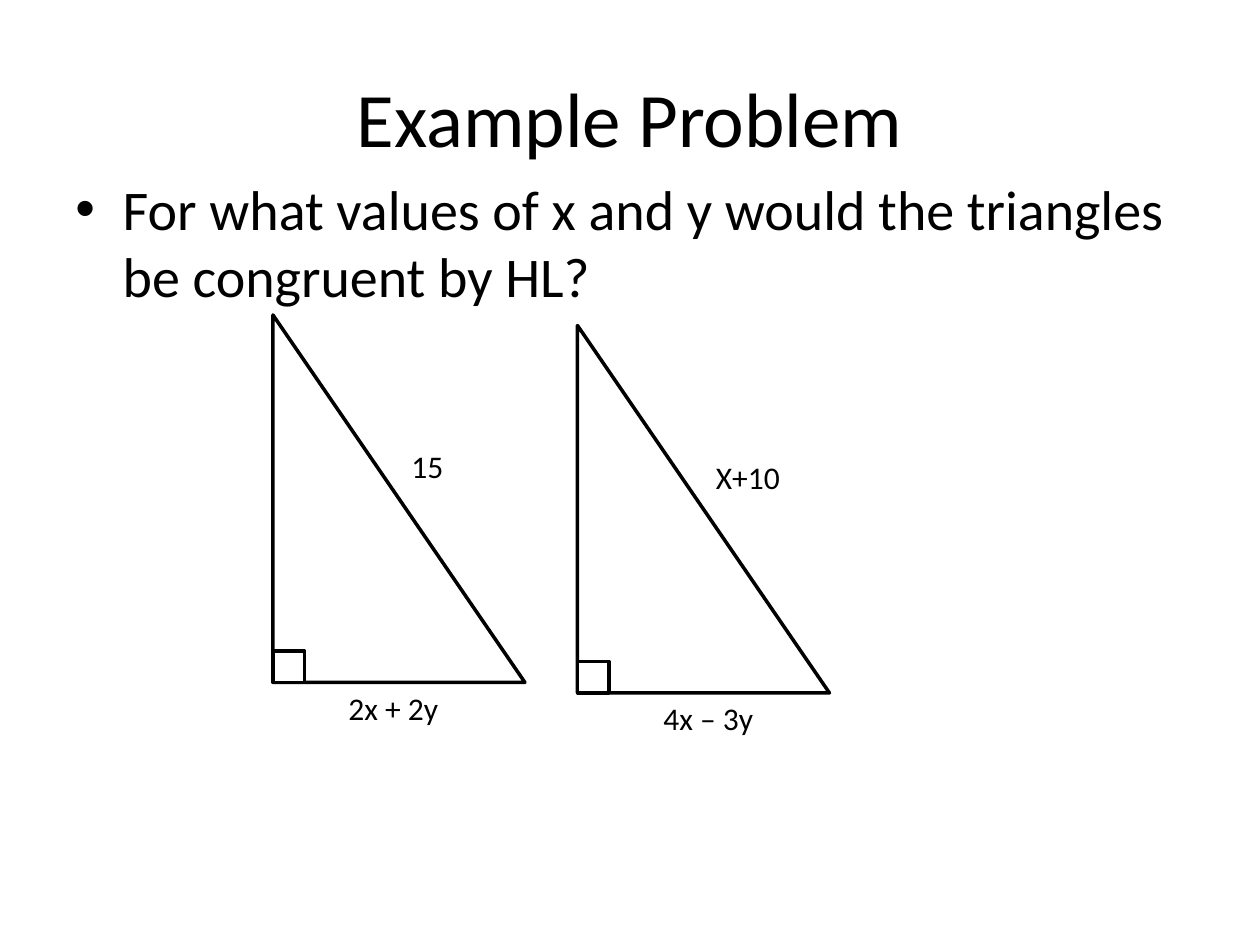
from dataclasses import dataclass

from lxml.etree import SubElement
from pptx import Presentation
from pptx.dml.color import RGBColor
from pptx.enum.shapes import MSO_SHAPE
from pptx.enum.text import MSO_ANCHOR, PP_ALIGN
from pptx.oxml.ns import qn
from pptx.util import Pt


@dataclass(frozen=True)
class Theme:
    font: str = "Calibri"
    ink: RGBColor = RGBColor(0, 0, 0)
    paper: RGBColor = RGBColor(255, 255, 255)
    title_size: int = 44
    body_size: int = 32
    label_size: int = 18
    line_width: int = 2


THEME = Theme()


def apply_format(target, values):
    for name, value in values.items():
        setattr(target, name, value)


def add_text(slide, box, text, size, frame_format=None, paragraph_format=None):
    shape = slide.shapes.add_textbox(*map(Pt, box))
    apply_format(shape.text_frame, {"word_wrap": True, **(frame_format or {})})
    paragraph = shape.text_frame.paragraphs[0]
    apply_format(paragraph, paragraph_format or {})
    run = paragraph.add_run()
    run.text = text
    apply_format(run.font, {"name": THEME.font, "size": Pt(size)})
    run.font.color.rgb = THEME.ink
    return paragraph


def add_outline(slide, kind, box):
    shape = slide.shapes.add_shape(kind, *map(Pt, box))
    shape.shadow.inherit = False
    shape.fill.solid()
    shape.fill.fore_color.rgb = THEME.paper
    shape.line.color.rgb = THEME.ink
    shape.line.width = Pt(THEME.line_width)


def add_title(slide, box, text):
    add_text(slide, box, text, THEME.title_size,
             {"vertical_anchor": MSO_ANCHOR.MIDDLE}, {"alignment": PP_ALIGN.CENTER})


def add_question(slide, box, text):
    paragraph = add_text(slide, box, text, THEME.body_size,
                         paragraph_format={"space_before": Pt(6.4)})
    properties = paragraph._p.get_or_add_pPr()
    indent = Pt(27)
    properties.set("marL", str(indent))
    properties.set("indent", str(-indent))
    SubElement(properties, qn("a:buFont"), typeface="Arial")
    SubElement(properties, qn("a:buChar"), char="•")


def add_right_triangle(slide, box, hypotenuse, base, base_offset):
    left, top, width, height = box
    corner = 18
    add_outline(slide, MSO_SHAPE.RIGHT_TRIANGLE, box)
    add_outline(slide, MSO_SHAPE.RECTANGLE,
                (left, top + height - corner, corner, corner))
    add_text(slide, (left + width / 2, top + 72, 84, 29), hypotenuse, THEME.label_size)
    add_text(slide, (left + base_offset, top + height, 108, 30), base, THEME.label_size)


def main():
    presentation = Presentation()
    apply_format(presentation, {"slide_width": Pt(720), "slide_height": Pt(540)})
    slide = presentation.slides.add_slide(presentation.slide_layouts[6])
    add_title(slide, (36, 21.6, 648, 90), "Example Problem")
    add_question(slide, (36, 96, 648, 386),
                 "For what values of x and y would the triangles be congruent by HL?")
    add_right_triangle(slide, (156, 180, 144, 210), "15", "2x + 2y", 36)
    add_right_triangle(slide, (330, 186, 144, 210), "X+10", "4x – 3y", 42)
    presentation.save("out.pptx")


if __name__ == "__main__":
    main()
